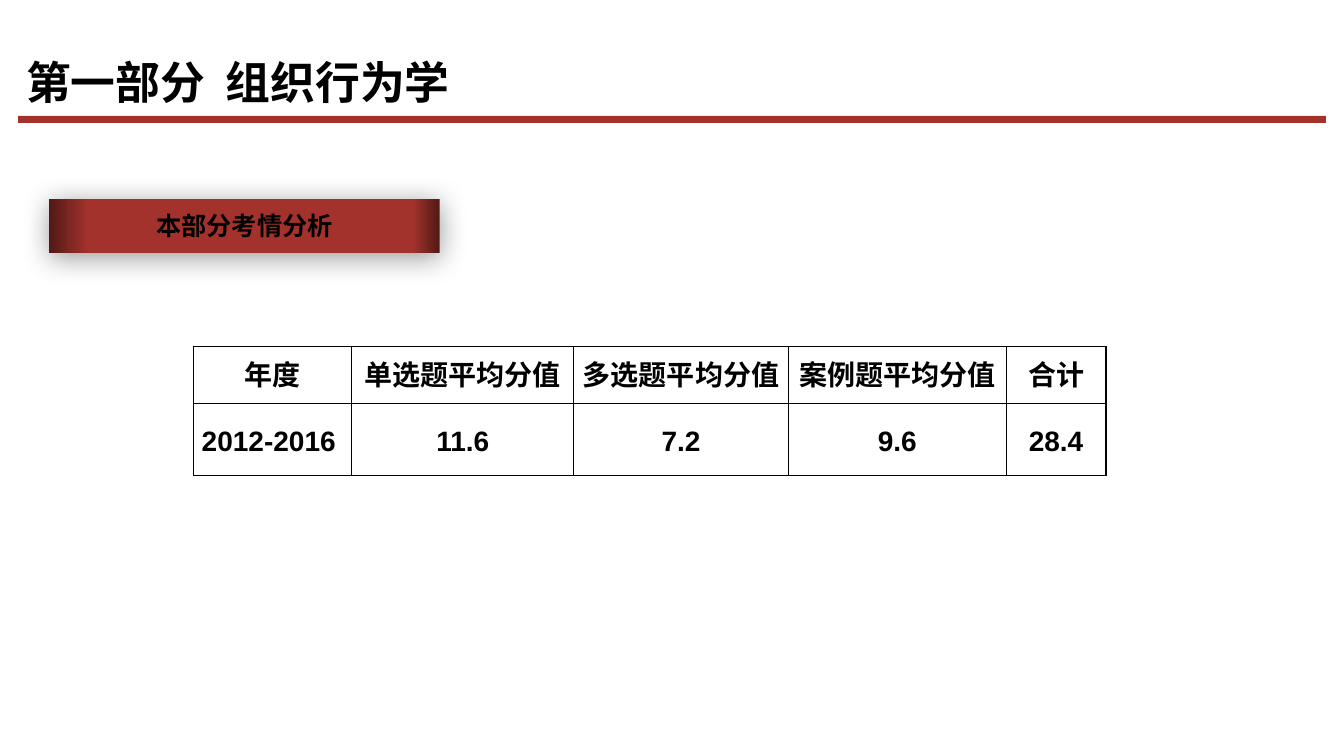
from pptx import Presentation
from pptx.dml.color import RGBColor
from pptx.enum.shapes import MSO_SHAPE
from pptx.enum.text import MSO_ANCHOR, PP_ALIGN
from pptx.oxml import parse_xml
from pptx.oxml.ns import nsdecls
from pptx.util import Emu, Inches, Pt

TITLE = "第一部分  组织行为学"
SECTION = "本部分考情分析"
SCORES = [
    ("年度", "单选题平均分值", "多选题平均分值", "案例题平均分值", "合计"),
    ("2012-2016 ", "11.6", "7.2", "9.6", "28.4"),
]
COLUMN_WIDTHS = (1.57, 2.2, 2.13, 2.16, 0.99)
ROW_HEIGHTS = (0.56, 0.72)
ROW_ANCHORS = (MSO_ANCHOR.TOP, MSO_ANCHOR.MIDDLE)

FONT = "Arial"
BLACK = RGBColor(0x00, 0x00, 0x00)
WHITE = RGBColor(0xFF, 0xFF, 0xFF)
RED = RGBColor(0xA4, 0x32, 0x2C)
DARK_RED = RGBColor(0x52, 0x19, 0x16)
BANNER_STOPS = ((0, DARK_RED), (7, RED), (90, RED), (100, DARK_RED))
RECTANGLE = MSO_SHAPE.RECTANGLE
CENTER = PP_ALIGN.CENTER


def inches(*lengths):
    return [Inches(length) for length in lengths]


def write(text_frame, text, size, alignment=None, line_spacing=None):
    paragraph = text_frame.paragraphs[0]
    paragraph.alignment = alignment
    paragraph.line_spacing = line_spacing
    run = paragraph.add_run()
    run.text = text
    run.font.name = FONT
    run.font.size = Pt(size)
    run.font.bold = True
    run.font.color.rgb = BLACK


def add_rectangle(slide, *box):
    shape = slide.shapes.add_shape(RECTANGLE, *inches(*box))
    shape.shadow.inherit = False
    shape.fill.solid()
    shape.fill.fore_color.rgb = RED
    shape.line.fill.background()
    return shape


def add_banner(slide):
    """Section label with dark gradient ends and a soft shadow below."""
    banner = add_rectangle(slide, 0.49, 1.97, 3.87, 0.54)
    stops = "".join(
        f'<a:gs pos="{position * 1000}"><a:srgbClr val="{color}"/></a:gs>'
        for position, color in BANNER_STOPS)
    properties = banner.element.spPr
    properties.replace(properties.find("{*}solidFill"), parse_xml(
        f'<a:gradFill {nsdecls("a")} rotWithShape="1"><a:gsLst>{stops}</a:gsLst>'
        '<a:lin ang="10800000" scaled="0"/></a:gradFill>'))
    properties.find("{*}effectLst").append(parse_xml(
        f'<a:outerShdw {nsdecls("a")} blurRad="{Pt(20)}" dist="{Pt(3)}" '
        'dir="5400000" rotWithShape="0">'
        f'<a:srgbClr val="{BLACK}"><a:alpha val="40000"/></a:srgbClr></a:outerShdw>'))
    banner.text_frame.vertical_anchor = MSO_ANCHOR.MIDDLE
    write(banner.text_frame, SECTION, 18, CENTER)


def add_borders(cell):
    properties = cell._tc.get_or_add_tcPr()
    for side in "LRTB":
        properties.append(parse_xml(
            f'<a:ln{side} {nsdecls("a")} w="{Pt(1)}"><a:solidFill>'
            f'<a:srgbClr val="{BLACK}"/></a:solidFill></a:ln{side}>'))


def add_scores(slide):
    table = slide.shapes.add_table(
        len(SCORES), len(COLUMN_WIDTHS),
        *inches(1.92, 3.44, sum(COLUMN_WIDTHS), sum(ROW_HEIGHTS))).table
    table.first_row = False
    table.horz_banding = False
    for column, width in zip(table.columns, COLUMN_WIDTHS):
        column.width = Inches(width)
    for row, height, anchor, values in zip(table.rows, ROW_HEIGHTS, ROW_ANCHORS, SCORES):
        row.height = Inches(height)
        for cell, value in zip(row.cells, values):
            add_borders(cell)
            cell.fill.background()
            cell.vertical_anchor = anchor
            cell.margin_left = cell.margin_right = Inches(0.07)
            cell.margin_top = cell.margin_bottom = Emu(0)
            write(cell.text_frame, value, 20, CENTER, 1.15)


def main():
    presentation = Presentation()
    presentation.slide_width, presentation.slide_height = inches(13.33, 7.5)
    slide = presentation.slides.add_slide(presentation.slide_layouts[6])
    slide.background.fill.solid()
    slide.background.fill.fore_color.rgb = WHITE

    add_rectangle(slide, 0.18, 1.15, 12.97, 0.07)
    title = slide.shapes.add_textbox(*inches(0.16, 0.49, 5.13, 0.64))
    title.text_frame.word_wrap = True
    write(title.text_frame, TITLE, 32)
    add_banner(slide)
    add_scores(slide)
    presentation.save("out.pptx")


if __name__ == "__main__":
    main()
